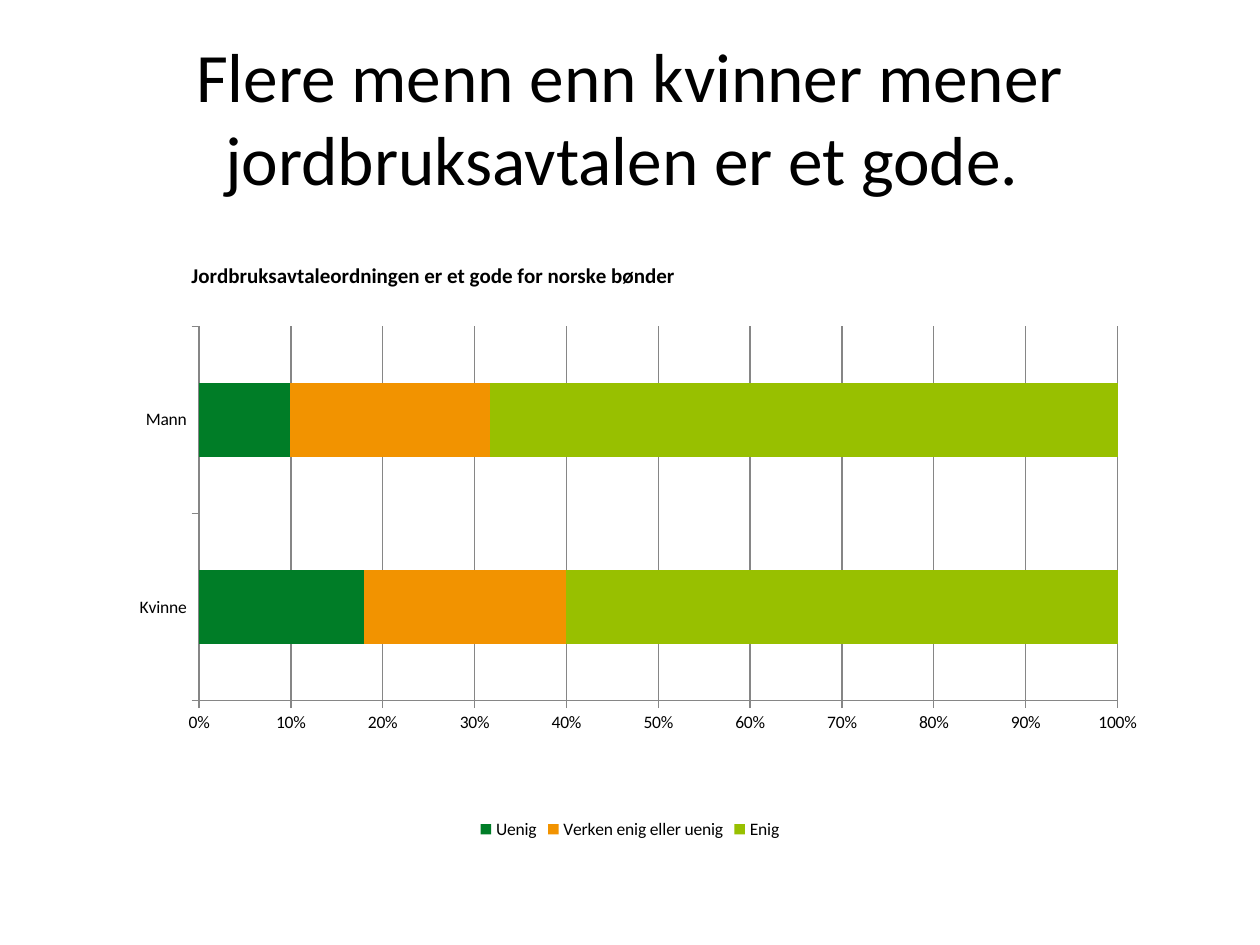
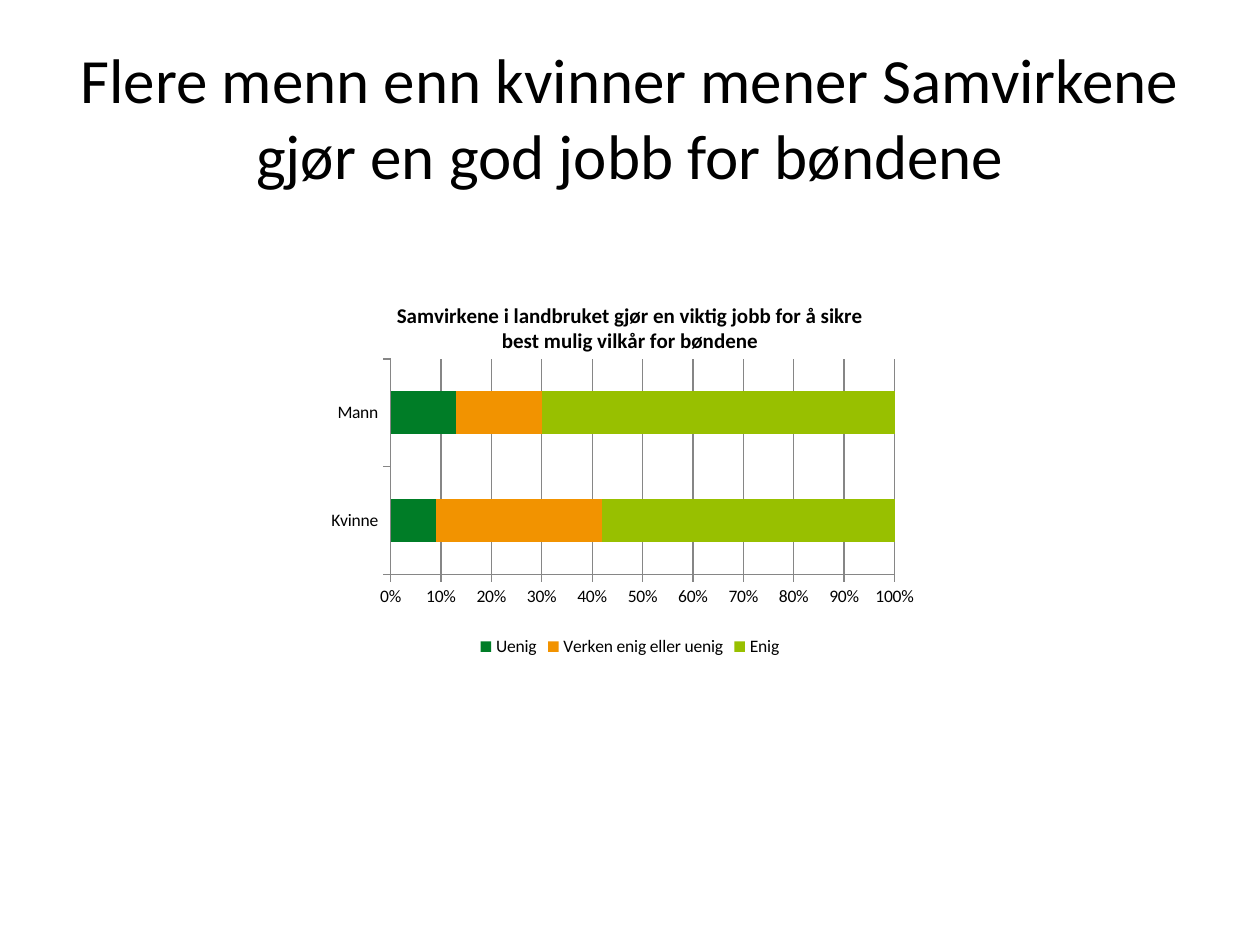
import pptx
import pptx.util
import pptx.chart.data
import pptx.dml.color
import pptx.enum.chart
import pptx.enum.text
import pptx.oxml
import pptx.oxml.ns
from dataclasses import dataclass

# Content: plot and chart title places are shares of the chart's size
GENDERS = ["Kvinne", "Mann"]
ANSWERS = ["Uenig", "Verken enig eller uenig", "Enig"]
SLIDES = [
    {
        "title": "Flere menn enn kvinner mener jordbruksavtalen er et gode. ",
        "title_size": 39.6,
        "chart_title": "Jordbruksavtaleordningen er et gode for norske bønder",
        "chart_title_place": (0.11, 0.06),
        "chart_box": (0.5, 1.75, 9, 4.95),
        "plot": (0.12, 0.17, 0.81, 0.6),
        "values": [(18, 10), (22, 22), (60, 69)],
    },
    {
        "title": "Flere menn enn kvinner mener Samvirkene gjør en god jobb for bøndene",
        "title_size": 36,
        "chart_title": "Samvirkene i landbruket gjør en viktig jobb for å sikre "
                       "best mulig vilkår for bøndene",
        "chart_title_place": None,
        "chart_box": (2.5, 2.25, 5, 3),
        "plot": (0.12, 0.2, 0.8, 0.57),
        "values": [(9, 13), (33, 17), (58, 70)],
    },
]


@dataclass(frozen=True)
class Theme:
    font: str = "Calibri"
    text: str = "000000"
    axis: str = "868686"
    answers: tuple = ("007D27", "F29300", "98C000")
    chart_title_size: float = 12
    label_size: float = 10
    slide_size: tuple = (10, 7.5)
    title_box: tuple = (0.5, 0.3, 9, 1.25)


THEME = Theme()


def color(value):
    return pptx.dml.color.RGBColor.from_string(value)


def inches(values):
    return [pptx.util.Inches(value) for value in values]


def style_font(font, size, bold=False):
    font.name = THEME.font
    font.size = pptx.util.Pt(size)
    font.bold = bold
    font.color.rgb = color(THEME.text)


def manual_layout(shares, inner=False):
    """Build a chart layout from x, y and optionally width, height."""
    fields = [("layoutTarget", "inner")] if inner else []
    fields += [("xMode", "edge"), ("yMode", "edge"), *zip("xywh", shares)]
    body = "".join(f'<c:{name} val="{value}"/>' for name, value in fields)
    namespace = pptx.oxml.ns.nsdecls("c")
    return pptx.oxml.parse_xml(
        f"<c:layout {namespace}><c:manualLayout>{body}</c:manualLayout></c:layout>")


def replace_layout(parent, index, layout):
    for old in parent.findall(pptx.oxml.ns.qn("c:layout")):
        parent.remove(old)
    parent.insert(index, layout)


def add_title(slide, text, size):
    box = slide.shapes.add_textbox(*inches(THEME.title_box))
    frame = box.text_frame
    frame.word_wrap = True
    frame.vertical_anchor = pptx.enum.text.MSO_ANCHOR.MIDDLE
    paragraph = frame.paragraphs[0]
    paragraph.text = text
    paragraph.alignment = pptx.enum.text.PP_ALIGN.CENTER
    style_font(paragraph.font, size)


def add_chart_title(chart, text, place):
    chart.has_title = True
    paragraph = chart.chart_title.text_frame.paragraphs[0]
    paragraph.text = text
    style_font(paragraph.font, THEME.chart_title_size, bold=True)
    element = chart.chart_title._element
    if place:
        replace_layout(element, 1, manual_layout(place))
    # Let the title overlay the plot
    for overlay in element.findall(pptx.oxml.ns.qn("c:overlay")):
        overlay.set("val", "1")


def style_axis(axis):
    axis.major_tick_mark = pptx.enum.chart.XL_TICK_MARK.OUTSIDE
    axis.minor_tick_mark = pptx.enum.chart.XL_TICK_MARK.NONE
    axis.format.line.color.rgb = color(THEME.axis)
    axis.format.line.width = pptx.util.Pt(0.75)


def add_answer_chart(slide, content):
    data = pptx.chart.data.CategoryChartData()
    data.categories = GENDERS
    for answer, values in zip(ANSWERS, content["values"]):
        data.add_series(answer, values)
    chart = slide.shapes.add_chart(
        pptx.enum.chart.XL_CHART_TYPE.BAR_STACKED_100,
        *inches(content["chart_box"]), data).chart
    style_font(chart.font, THEME.label_size)
    add_chart_title(chart, content["chart_title"], content["chart_title_place"])

    # Bars
    plot = chart.plots[0]
    plot.gap_width = 150
    plot.overlap = 100
    plot.vary_by_categories = False
    for series, fill in zip(plot.series, THEME.answers):
        series.format.fill.solid()
        series.format.fill.fore_color.rgb = color(fill)
    plot_area = chart._chartSpace.find(".//" + pptx.oxml.ns.qn("c:plotArea"))
    replace_layout(plot_area, 0, manual_layout(content["plot"], inner=True))

    # Axes
    style_axis(chart.category_axis)
    percent_axis = chart.value_axis
    style_axis(percent_axis)
    percent_axis.minimum_scale, percent_axis.maximum_scale = 0, 1
    percent_axis.major_unit = 0.1
    percent_axis.has_major_gridlines = True
    gridline = percent_axis.major_gridlines.format.line
    gridline.color.rgb = color(THEME.axis)
    gridline.width = pptx.util.Pt(0.75)
    percent_axis.tick_labels.number_format = "0%"
    percent_axis.tick_labels.number_format_is_linked = False

    # Legend
    chart.has_legend = True
    chart.legend.position = pptx.enum.chart.XL_LEGEND_POSITION.BOTTOM
    chart.legend.include_in_layout = False


def main():
    presentation = pptx.Presentation()
    presentation.slide_width, presentation.slide_height = inches(THEME.slide_size)
    for content in SLIDES:
        slide = presentation.slides.add_slide(presentation.slide_layouts[6])
        add_title(slide, content["title"], content["title_size"])
        add_answer_chart(slide, content)
    presentation.save("out.pptx")


if __name__ == "__main__":
    main()
